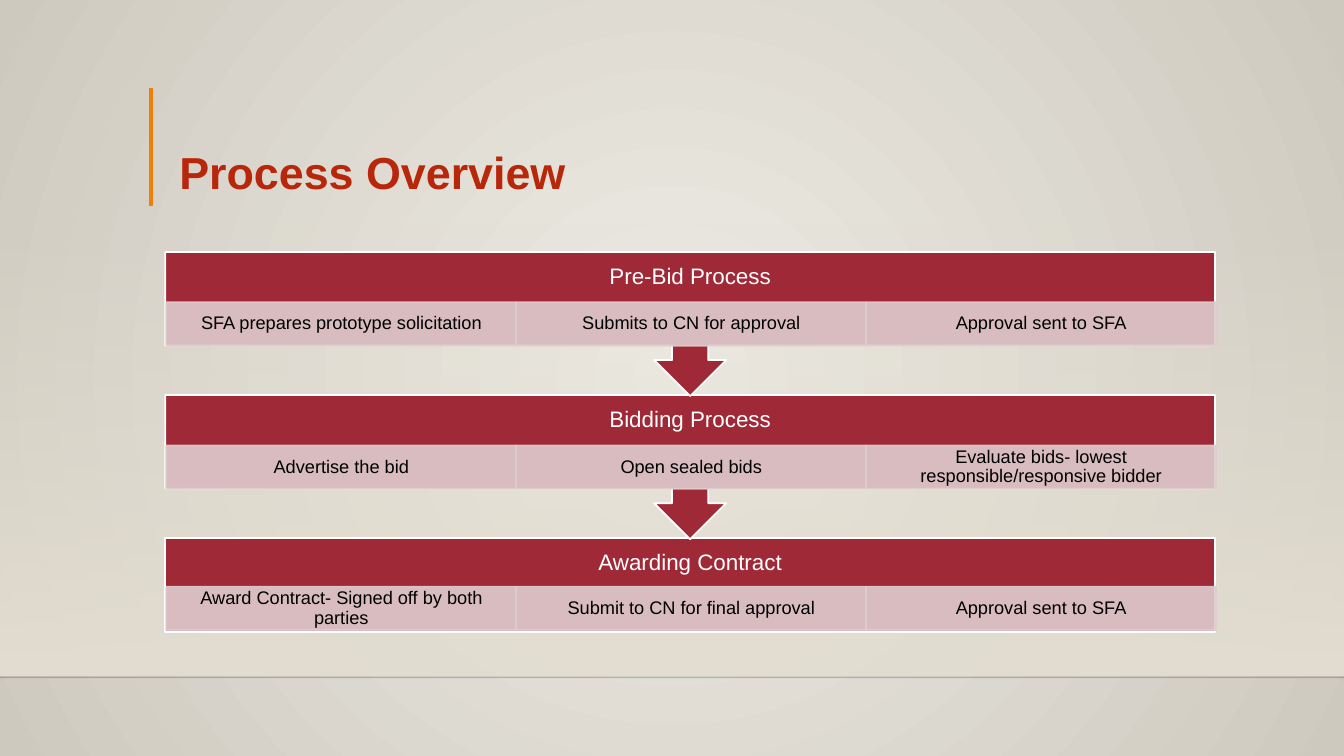
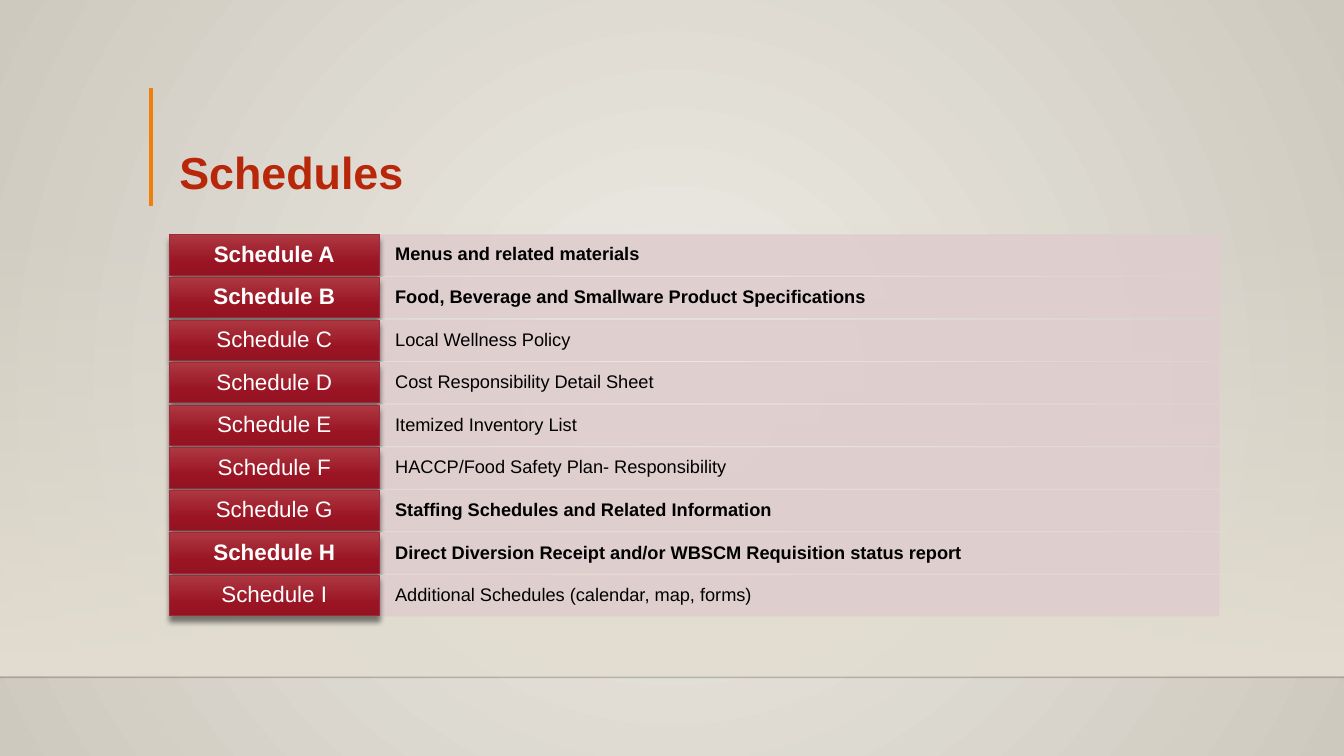
from lxml import etree
from pptx import Presentation
from pptx.dml.color import RGBColor
from pptx.enum.shapes import MSO_CONNECTOR, MSO_SHAPE
from pptx.enum.text import MSO_ANCHOR, PP_ALIGN
from pptx.oxml.ns import qn
from pptx.util import Inches, Pt

PROCESS = [
    ("Pre-Bid Process", ["SFA prepares prototype solicitation",
                         "Submits to CN for approval",
                         "Approval sent to SFA"]),
    ("Bidding Process", ["Advertise the bid",
                         "Open sealed bids",
                         "Evaluate bids- lowest responsible/responsive bidder"]),
    ("Awarding Contract", ["Award Contract- Signed off by both parties",
                           "Submit to CN for final approval",
                           "Approval sent to SFA"]),
]
# label, label is bold, description, description is bold
SCHEDULES = [
    ("Schedule A", True, "Menus and related materials", True),
    ("Schedule B", True, "Food, Beverage and Smallware Product Specifications", True),
    ("Schedule C", False, "Local Wellness Policy", False),
    ("Schedule D", False, "Cost Responsibility Detail Sheet", False),
    ("Schedule E", False, "Itemized Inventory List", False),
    ("Schedule F", False, "HACCP/Food Safety Plan- Responsibility", False),
    ("Schedule G", False, "Staffing Schedules and Related Information", True),
    ("Schedule H", True, "Direct Diversion Receipt and/or WBSCM Requisition status report", True),
    ("Schedule I", False, "Additional Schedules (calendar, map, forms)", False),
]

FONT = "Arial"
WHITE = RGBColor(0xFF, 0xFF, 0xFF)
BLACK = RGBColor(0, 0, 0)
TITLE_RED = RGBColor(0xB8, 0x27, 0x0A)
ORANGE = RGBColor(0xF0, 0x7F, 0x09)
CRIMSON = RGBColor(0x9F, 0x29, 0x36)
PINK = RGBColor(0xDF, 0xCD, 0xCE)
BAND = RGBColor(0xE3, 0xDE, 0xD1)
BACKGROUND = [(0, RGBColor(0xEE, 0xEC, 0xE6), 100), (100, RGBColor(0xCE, 0xC9, 0xBE), 100)]
BAND_FADE = [(0, BAND, 0), (100, BAND, 100)]
LABEL_FADE = [(0, RGBColor(0xAD, 0x38, 0x42), 100), (69, RGBColor(0x9A, 0x14, 0x23), 100),
              (100, RGBColor(0x92, 0x13, 0x21), 100)]

SLIDE_W, SLIDE_H = 13.33, 7.5
HEADER = {"size": Pt(16), "color": WHITE}
DETAIL = {"size": Pt(13), "color": BLACK}


def sub(parent, tag, **attrs):
    return etree.SubElement(parent, qn(tag), {k: str(v) for k, v in attrs.items()})


def add_color(parent, color, opacity):
    clr = sub(parent, "a:srgbClr", val=color)
    if opacity < 100:
        sub(clr, "a:alpha", val=opacity * 1000)


def set_gradient(fill, element, stops, radial=False):
    """Fill with (position, colour, opacity) stops, downwards or from the centre."""
    fill.gradient()
    grad = element.find(".//" + qn("a:gradFill"))
    for child in list(grad):
        grad.remove(child)
    gs_list = sub(grad, "a:gsLst")
    for pos, color, opacity in stops:
        add_color(sub(gs_list, "a:gs", pos=pos * 1000), color, opacity)
    if radial:
        circle = sub(grad, "a:path", path="circle")
        sub(circle, "a:fillToRect", l=50000, t=50000, r=50000, b=50000)
    else:
        sub(grad, "a:lin", ang=5400000, scaled=0)


def set_opacity(element, opacity):
    for clr in element.iter(qn("a:srgbClr")):
        sub(clr, "a:alpha", val=opacity * 1000)


def set_text(shape, text, color, insets=(0.1, 0.05, 0.1, 0.05),
             align=PP_ALIGN.CENTER, anchor=MSO_ANCHOR.MIDDLE, **font):
    tf = shape.text_frame
    tf.word_wrap = True
    tf.vertical_anchor = anchor
    for side, inset in zip(("left", "top", "right", "bottom"), insets):
        setattr(tf, f"margin_{side}", Inches(inset))
    p = tf.paragraphs[0]
    p.alignment = align
    p.line_spacing = 0.9
    r = p.add_run()
    r.text = text
    r.font.name = FONT
    r.font.color.rgb = color
    for name, value in font.items():
        setattr(r.font, name, value)


def add_box(slide, box, fill=None, line=None, width=1.25, kind=MSO_SHAPE.RECTANGLE):
    sp = slide.shapes.add_shape(kind, *map(Inches, box))
    sp.shadow.inherit = False
    if fill is not None:
        sp.fill.solid()
        sp.fill.fore_color.rgb = fill
    if line is None:
        sp.line.fill.background()
    else:
        sp.line.color.rgb = line
        sp.line.width = Pt(width)
    return sp


def add_pink_box(slide, box, width):
    sp = add_box(slide, box, PINK, PINK, width)
    set_opacity(sp._element.spPr, 90)
    return sp


def add_line(slide, ends, color, width, opacity=100):
    ln = slide.shapes.add_connector(MSO_CONNECTOR.STRAIGHT, *map(Inches, ends))
    ln.line.color.rgb = color
    ln.line.width = Pt(width)
    if opacity < 100:
        set_opacity(ln._element.spPr, opacity)
    sub(ln._element.spPr, "a:effectLst")


def add_slide(prs, title):
    slide = prs.slides.add_slide(prs.slide_layouts[6])
    band = add_box(slide, (0, 2.2, SLIDE_W, 4.5))
    set_gradient(band.fill, band._element.spPr, BAND_FADE)
    add_line(slide, (0, 6.72, SLIDE_W, 6.72), BLACK, 1, 20)
    add_line(slide, (1.5, 0.87, 1.5, 2.04), ORANGE, 3)
    tb = slide.shapes.add_textbox(*map(Inches, (1.68, 0.88, 10.41, 1.15)))
    set_text(tb, title, TITLE_RED, align=PP_ALIGN.LEFT, anchor=MSO_ANCHOR.BOTTOM,
             size=Pt(32), bold=True)
    return slide


def add_process(slide):
    left, top, width, pitch = 1.64, 2.5, 10.41, 1.42
    box_h, header_h, cell_h = 0.93, 0.5, 0.43
    last = len(PROCESS) - 1
    # Bottom step first, so that each arrow tip lies over the next step
    for i in range(last, -1, -1):
        header, details = PROCESS[i]
        y = top + i * pitch
        if i == last:
            kind, height, cell_y = MSO_SHAPE.RECTANGLE, box_h, y + header_h - 0.02
        else:
            kind, height, cell_y = MSO_SHAPE.DOWN_ARROW_CALLOUT, pitch + 0.01, y + header_h
        step = add_box(slide, (left, y, width, height), CRIMSON, WHITE, kind=kind)
        set_text(step, header, insets=(0.12, 0, 0.12, cell_h), **HEADER)
        cell_w = width / len(details)
        for j, detail in enumerate(details):
            cell = add_pink_box(slide, (left + 0.01 + j * cell_w, cell_y, cell_w, cell_h), 1.25)
            set_text(cell, detail, insets=(0.1, 0.02, 0.1, 0.02), **DETAIL)


def add_schedules(slide):
    left, top, label_w, detail_w = 1.68, 2.33, 2.08, 8.33
    height, pitch = 0.4, 3.38 / (len(SCHEDULES) - 1)
    for i, (name, name_bold, detail, detail_bold) in enumerate(SCHEDULES):
        y = top + i * pitch
        row = add_pink_box(slide, (left + label_w, y, detail_w, height), 0.75)
        set_text(row, detail, insets=(0.16, 0.1, 0.16, 0.1), align=PP_ALIGN.LEFT,
                 bold=detail_bold, **DETAIL)
        label = add_box(slide, (left, y, label_w, height), line=CRIMSON, width=0.75)
        sp_pr = label._element.spPr
        set_gradient(label.fill, sp_pr, LABEL_FADE)
        shadow = sub(sp_pr.find(qn("a:effectLst")), "a:outerShdw", blurRad=Pt(4), dist=Pt(4),
                     dir=5400000, rotWithShape=0)
        add_color(shadow, BLACK, 48)
        set_text(label, name, insets=(0.11, 0.04, 0.11, 0.04), bold=name_bold, **HEADER)


def main():
    prs = Presentation()
    prs.slide_width, prs.slide_height = Inches(SLIDE_W), Inches(SLIDE_H)
    master = prs.slide_master
    set_gradient(master.background.fill, master.element, BACKGROUND, radial=True)
    add_process(add_slide(prs, "Process Overview"))
    add_schedules(add_slide(prs, "Schedules"))
    prs.save("out.pptx")


if __name__ == "__main__":
    main()
